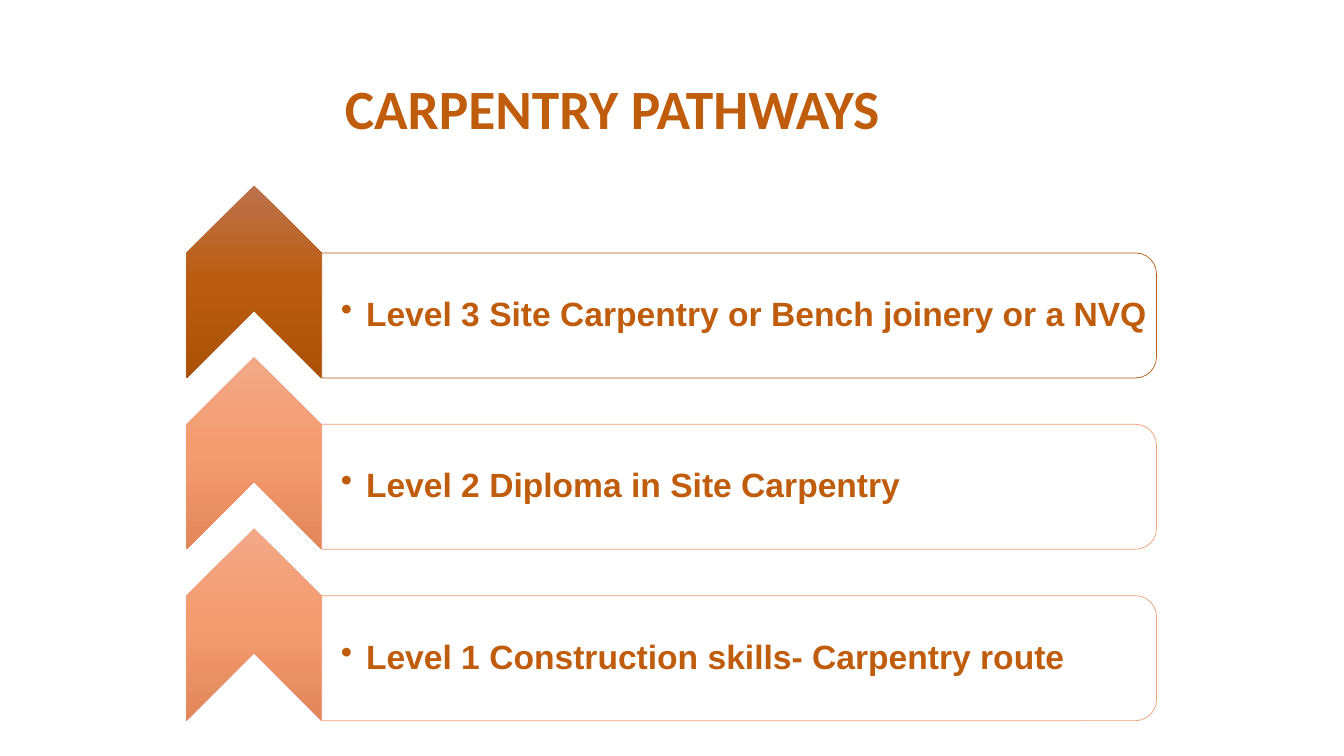
from lxml.etree import SubElement
from pptx import Presentation
from pptx.dml.color import RGBColor
from pptx.enum.shapes import MSO_SHAPE
from pptx.enum.text import MSO_ANCHOR, MSO_AUTO_SIZE, PP_ALIGN
from pptx.oxml.ns import qn
from pptx.util import Inches, Pt

TEXT_COLOR = "C05D0C"
DARK = {"gradient": ("BD724D", "BA5C0F", "AC5207"), "line": "B25D17"}
LIGHT = {"gradient": ("F2A887", "F49B6F", "E1875B"), "line": "EE9D75"}
LEVELS = [
    ("Level 3 Site Carpentry or Bench joinery or a NVQ", DARK),
    ("Level 2 Diploma in Site Carpentry", LIGHT),
    ("Level 1 Construction skills- Carpentry route", LIGHT),
]
ROW_PITCH = 1.7
CHEVRON_WIDTH, CHEVRON_HEIGHT = 1.34, 1.91
BAR_HEIGHT = 1.24


def color(hex_string):
    return RGBColor.from_string(hex_string)


def set_format(target, values):
    for name, value in values.items():
        setattr(target, name, value)


def style_text(paragraph, font_name, size, line_spacing):
    set_format(paragraph, {"alignment": PP_ALIGN.LEFT, "line_spacing": line_spacing})
    set_format(paragraph.font, {"name": font_name, "size": Pt(size), "bold": True})
    paragraph.font.color.rgb = color(TEXT_COLOR)


def add_turned_shape(shapes, kind, left, top, width, height, rotation):
    """Add a shape turned by a quarter so that it fills the given visible box."""
    shape = shapes.add_shape(
        kind,
        Inches(left + (width - height) / 2),
        Inches(top + (height - width) / 2),
        Inches(height),
        Inches(width),
    )
    shape.rotation = rotation
    shape.shadow.inherit = False
    return shape


def fill_downward_gradient(shape, colors):
    shape.fill.gradient()
    gradient = shape.element.spPr.find(qn("a:gradFill"))
    gradient.set("rotWithShape", "0")
    for child in list(gradient):
        gradient.remove(child)
    stops = SubElement(gradient, qn("a:gsLst"))
    for index, hex_string in enumerate(colors):
        stop = SubElement(stops, qn("a:gs"), pos=str(index * 50000))
        SubElement(stop, qn("a:srgbClr"), val=hex_string)
    SubElement(gradient, qn("a:lin"), ang="5400000", scaled="0")


def add_bullet(paragraph):
    properties = paragraph._p.get_or_add_pPr()
    properties.set("marL", str(Inches(0.25)))
    properties.set("indent", str(Inches(-0.25)))
    SubElement(properties, qn("a:buChar"), char="•")


def add_title(slide, left, top, width, height):
    title = slide.shapes.title
    set_format(title, {"left": Inches(left), "top": Inches(top),
                       "width": Inches(width), "height": Inches(height)})
    frame = title.text_frame
    frame.text = "CARPENTRY PATHWAYS"
    set_format(frame, {"vertical_anchor": MSO_ANCHOR.BOTTOM, "word_wrap": True,
                       "auto_size": MSO_AUTO_SIZE.NONE})
    style_text(frame.paragraphs[0], "Calibri", 39.6, 0.85)


def add_level_text(shapes, text, left, top, width, height):
    box = shapes.add_textbox(Inches(left), Inches(top), Inches(width), Inches(height))
    frame = box.text_frame
    set_format(frame, {"word_wrap": True, "vertical_anchor": MSO_ANCHOR.MIDDLE,
                       "margin_left": Inches(0.19), "margin_right": Inches(0.02),
                       "margin_top": Inches(0.02), "margin_bottom": Inches(0.02)})
    frame.text = text
    paragraph = frame.paragraphs[0]
    paragraph.level = 1
    add_bullet(paragraph)
    style_text(paragraph, "Arial", 24, 0.9)


def add_level(shapes, text, style, left, top, width):
    chevron = add_turned_shape(shapes, MSO_SHAPE.CHEVRON, left, top,
                               CHEVRON_WIDTH, CHEVRON_HEIGHT, 270)
    fill_downward_gradient(chevron, style["gradient"])
    chevron.line.fill.background()

    bar_left = left + CHEVRON_WIDTH
    bar_top = top + CHEVRON_HEIGHT - BAR_HEIGHT
    bar_width = width - CHEVRON_WIDTH
    bar = add_turned_shape(shapes, MSO_SHAPE.ROUND_2_SAME_RECTANGLE, bar_left, bar_top,
                           bar_width, BAR_HEIGHT, 90)
    bar.fill.solid()
    bar.fill.fore_color.rgb = color("FFFFFF")
    fill_color = bar.element.spPr.find(qn("a:solidFill")).find(qn("a:srgbClr"))
    SubElement(fill_color, qn("a:alpha"), val="90000")
    bar.line.color.rgb = color(style["line"])
    bar.line.width = Pt(0.5)

    add_level_text(shapes, text, bar_left, bar_top + 0.06, bar_width - 0.06, BAR_HEIGHT - 0.12)


def add_pathway(slide, left, top, width):
    group = slide.shapes.add_group_shape()
    for row, (text, style) in enumerate(LEVELS):
        add_level(group.shapes, text, style, left, top + row * ROW_PITCH, width)


def main():
    presentation = Presentation()
    presentation.slide_width = Inches(13.33)
    presentation.slide_height = Inches(7.5)
    slide = presentation.slides.add_slide(presentation.slide_layouts[5])
    add_title(slide, 3.32, 0.57, 6.05, 0.88)
    add_pathway(slide, 1.85, 1.84, 9.62)
    presentation.save("out.pptx")


if __name__ == "__main__":
    main()
